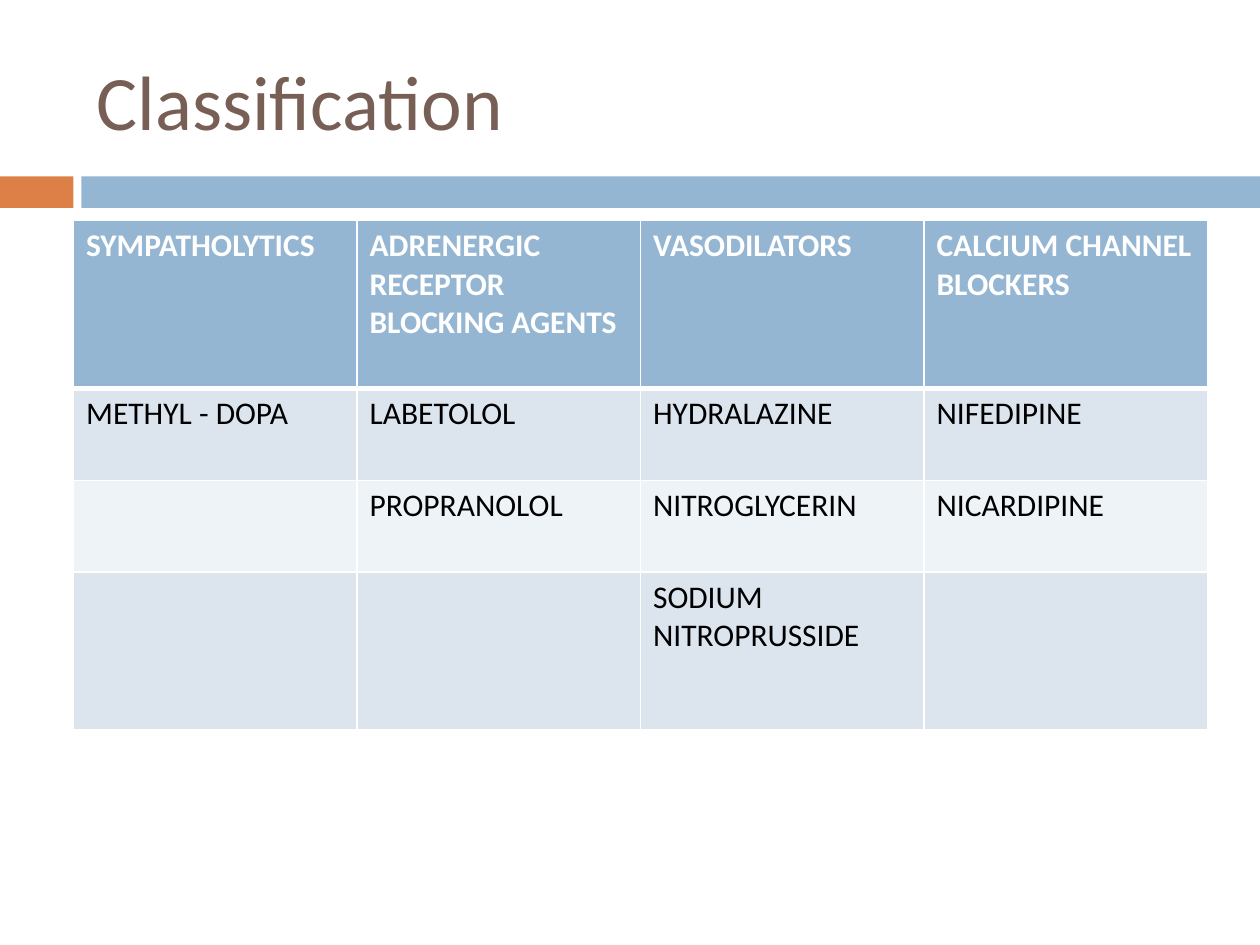
import pptx
import pptx.util
import pptx.dml.color
import pptx.enum.shapes
import pptx.enum.text
import pptx.oxml.ns
import lxml.etree
from dataclasses import dataclass
from pptx.util import Pt


@dataclass(frozen=True)
class Theme:
    font: str = "Calibri"
    title_size: int = 44
    table_size: int = 18
    title: str = "775F55"
    accent: str = "DD8047"
    header: str = "94B6D2"
    bands: tuple = ("DCE5EE", "EEF3F7")
    white: str = "FFFFFF"
    black: str = "000000"


theme = Theme()


def add_span(para, text, size, color, bold=False):
    span = para.add_run()
    span.text = text
    span.font.name = theme.font
    span.font.size = Pt(size)
    span.font.bold = bold
    span.font.color.rgb = pptx.dml.color.RGBColor.from_string(color)


def add_borders(cell, widths):
    properties = cell._tc.get_or_add_tcPr()
    for index, (side, width) in enumerate(widths.items()):
        line = lxml.etree.Element(pptx.oxml.ns.qn(f"a:ln{side}"), w=str(Pt(width)))
        fill = lxml.etree.SubElement(line, pptx.oxml.ns.qn("a:solidFill"))
        lxml.etree.SubElement(fill, pptx.oxml.ns.qn("a:srgbClr"), val=theme.white)
        properties.insert(index, line)


deck = pptx.Presentation()
deck.slide_width = Pt(720)
deck.slide_height = Pt(540)
page = deck.slides.add_slide(deck.slide_layouts[5])

for left, width, color in ((0, 42, theme.accent), (46.5, 673.5, theme.header)):
    bar = page.shapes.add_shape(
        pptx.enum.shapes.MSO_SHAPE.RECTANGLE, Pt(left), Pt(100.8), Pt(width), Pt(18)
    )
    bar.shadow.inherit = False
    bar.fill.solid()
    bar.fill.fore_color.rgb = pptx.dml.color.RGBColor.from_string(color)
    bar.line.fill.background()

title = page.shapes.title
title.left, title.top, title.width, title.height = Pt(48), Pt(18), Pt(642), Pt(78)
title.text_frame.word_wrap = True
title.text_frame.vertical_anchor = pptx.enum.text.MSO_ANCHOR.MIDDLE
para = title.text_frame.paragraphs[0]
para.alignment = pptx.enum.text.PP_ALIGN.LEFT
add_span(para, "Classification", theme.title_size, theme.title)

drug_rows = [
    ["SYMPATHOLYTICS", "ADRENERGIC RECEPTOR BLOCKING AGENTS", "VASODILATORS", "CALCIUM CHANNEL BLOCKERS"],
    ["METHYL - DOPA", "LABETOLOL", "HYDRALAZINE", "NIFEDIPINE"],
    ["", "PROPRANOLOL", "NITROGLYCERIN", "NICARDIPINE"],
    ["", "", "SODIUM NITROPRUSSIDE", ""],
]
row_heights = [96, 52.5, 52.5, 90]
table = page.shapes.add_table(
    len(drug_rows), len(drug_rows[0]), Pt(42), Pt(126), Pt(648), Pt(sum(row_heights))
).table
for column in table.columns:
    column.width = Pt(162)

for row_index, (texts, height) in enumerate(zip(drug_rows, row_heights)):
    table.rows[row_index].height = Pt(height)
    is_header = row_index == 0
    fill_color = theme.header if is_header else theme.bands[(row_index - 1) % 2]
    text_color = theme.white if is_header else theme.black
    widths = {"L": 1, "R": 1, "T": 3 if row_index == 1 else 1, "B": 3 if is_header else 1}
    for column_index, text in enumerate(texts):
        cell = table.cell(row_index, column_index)
        cell.fill.solid()
        cell.fill.fore_color.rgb = pptx.dml.color.RGBColor.from_string(fill_color)
        add_borders(cell, widths)
        if text:
            add_span(cell.text_frame.paragraphs[0], text, theme.table_size, text_color, is_header)

deck.save("out.pptx")
